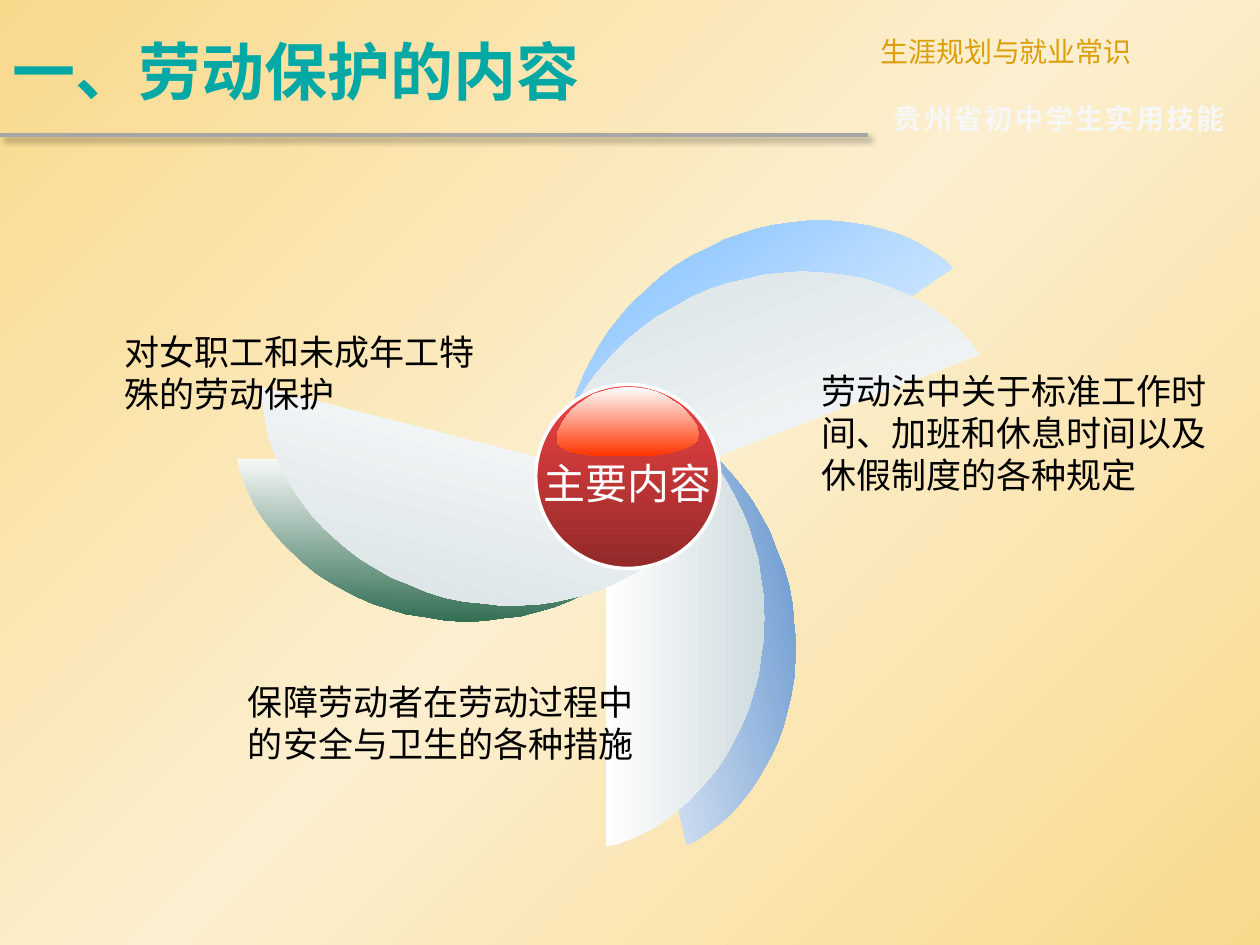
from lxml import etree
from pptx import Presentation
from pptx.dml.color import RGBColor
from pptx.enum.shapes import MSO_CONNECTOR, MSO_SHAPE
from pptx.enum.text import MSO_ANCHOR, MSO_AUTO_SIZE, PP_ALIGN
from pptx.oxml import parse_xml
from pptx.oxml.ns import nsdecls, qn
from pptx.util import Cm, Pt
import copy

STRAIGHT, ELLIPSE = MSO_CONNECTOR.STRAIGHT, MSO_SHAPE.OVAL
LEFT, CENTER, JUSTIFY = PP_ALIGN.LEFT, PP_ALIGN.CENTER, PP_ALIGN.JUSTIFY
MIDDLE = MSO_ANCHOR.MIDDLE
GROW, FIXED = MSO_AUTO_SIZE.SHAPE_TO_FIT_TEXT, MSO_AUTO_SIZE.NONE

FONT = "Noto Sans CJK SC"
WHITE = RGBColor(0xFF, 0xFF, 0xFF)
BLACK = RGBColor(0x00, 0x00, 0x00)
SAND = RGBColor(0xF9, 0xD9, 0x8C)
CREAM = RGBColor(0xFC, 0xEF, 0xCF)
GRAY = RGBColor(0xA6, 0xA6, 0xA6)
PALE = RGBColor(0xF7, 0xF7, 0xF7)
GOLD = RGBColor(0xDC, 0x9F, 0x0C)
TEAL = RGBColor(0x04, 0xA8, 0xA4)
SILVER = RGBColor(0xCF, 0xDB, 0xDF)
BLUE = RGBColor(0x44, 0x7E, 0xC4)
GREEN = RGBColor(0x2A, 0x68, 0x4C)
SKY = RGBColor(0x5E, 0xAE, 0xFF)
RED = RGBColor(0xF1, 0x43, 0x43)
DARK_RED = RGBColor(0x92, 0x29, 0x29)
ORANGE = RGBColor(0xFF, 0x33, 0x00)

# Upper half of a blade's curved edge, in cm; the lower half mirrors it
BLADE_HEIGHT = 9.22
HALF_EDGE = [
    (0, 0), (0.23, 0.05), (0.48, 0.15), (0.71, 0.25), (0.97, 0.38),
    (1.19, 0.53), (1.42, 0.71), (1.65, 0.91), (1.85, 1.12), (2.06, 1.35),
    (2.26, 1.6), (2.44, 1.88), (2.59, 2.16), (2.74, 2.46), (2.87, 2.77),
    (2.97, 3.1), (3.07, 3.45), (3.12, 3.84), (3.18, 4.22), (3.2, 4.61)]
BLADE = HALF_EDGE + [(x, BLADE_HEIGHT - y) for x, y in HALF_EDGE[-2::-1]]

# Highlight on the ball, in cm
GLOSS = [
    (14.05, 8.59), (14.1, 8.74), (14.05, 8.89), (13.92, 8.99), (13.72, 9.07),
    (13.46, 9.14), (13.16, 9.19), (12.12, 9.19), (11.84, 9.17), (11.53, 9.12),
    (11.35, 9.04), (11.25, 8.94), (11.23, 8.81), (11.25, 8.69), (11.33, 8.53),
    (11.43, 8.38), (11.53, 8.26), (11.66, 8.15), (11.81, 8.05), (11.96, 7.95),
    (12.12, 7.9), (12.29, 7.85), (12.47, 7.82), (12.67, 7.8), (12.88, 7.82),
    (13.06, 7.85), (13.23, 7.9), (13.41, 7.98), (13.56, 8.08), (13.72, 8.18),
    (13.84, 8.31), (13.94, 8.43)]


class Deck:
    """Holds the style and the current slide."""

    def __init__(self, prs):
        self.s = prs.slides.add_slide(prs.slide_layouts[5])

    def group(self):
        return self.s.shapes.add_group_shape().shapes

    def gradient(self, fill, start, end, angle=0):
        fill.gradient()
        fill.gradient_angle = angle
        for stop, color, pos in zip(fill.gradient_stops, (start, end), (0, 1)):
            stop.color.rgb = color
            stop.position = pos

    def background(self, edge, middle):
        fill = self.s.background.fill
        self.gradient(fill, edge, edge, 315)
        first = self.s.element.find(".//" + qn("a:gs"))
        first.addnext(copy.deepcopy(first))
        stop = fill.gradient_stops[1]
        stop.position = 0.5
        stop.color.rgb = middle

    def run(self, tf, text, size, color, align=LEFT, bold=False, spacing=0):
        p = tf.paragraphs[0]
        p.alignment = align
        r = p.add_run()
        r.text = text
        r.font.name, r.font.size, r.font.bold = FONT, Pt(size), bold
        r.font.color.rgb = color
        rpr = r._r.get_or_add_rPr()
        etree.SubElement(rpr, qn("a:ea"), typeface=FONT)
        if spacing:
            rpr.set("spc", str(spacing))

    def title(self, box, text):
        sp = self.s.shapes.title
        sp.left, sp.top, sp.width, sp.height = map(Cm, box)
        tf = sp.text_frame
        tf.auto_size, tf.vertical_anchor = FIXED, MIDDLE
        self.run(tf, text, 36, TEAL, bold=True)

    def text(self, box, text, size=20, color=BLACK, shapes=None, wrap=True,
             **style):
        sp = (shapes or self.s.shapes).add_textbox(*map(Cm, box))
        tf = sp.text_frame
        tf.word_wrap, tf.auto_size = wrap, GROW
        self.run(tf, text, size, color, **style)

    def rule(self, y, length):
        line = self.s.shapes.add_connector(
            STRAIGHT, Cm(0), Cm(y), Cm(length), Cm(y))
        line.line.color.rgb = GRAY
        line.line.width = Pt(2.25)
        line._element.spPr.append(parse_xml(
            f'<a:effectLst {nsdecls("a")}><a:outerShdw blurRad="{Pt(4)}" '
            f'dist="{Pt(3)}" dir="2700000" algn="tl" rotWithShape="0">'
            '<a:srgbClr val="000000"><a:alpha val="40000"/></a:srgbClr>'
            '</a:outerShdw></a:effectLst>'))

    def freeform(self, shapes, points, end, angle=0, left=0, top=0, rotation=0):
        pts = [(Cm(left + x), Cm(top + y)) for x, y in points]
        builder = shapes.build_freeform(*pts[0])
        builder.add_line_segments(pts[1:], close=True)
        sp = builder.convert_to_shape()
        sp.shadow.inherit = False
        sp.line.fill.background()
        self.gradient(sp.fill, WHITE, end, angle)
        sp.rotation = rotation

    def ball(self, shapes, left, top, size):
        sp = shapes.add_shape(ELLIPSE, Cm(left), Cm(top), Cm(size), Cm(size))
        sp.shadow.inherit = False
        self.gradient(sp.fill, RED, DARK_RED, 270)
        sp.line.color.rgb = WHITE
        sp.line.width = Pt(2)


def main():
    prs = Presentation()
    prs.slide_width, prs.slide_height = Cm(25.4), Cm(19.05)
    deck = Deck(prs)
    deck.background(SAND, CREAM)

    # Header
    deck.rule(2.72, 17.5)
    deck.text((17.5, 0.58, 7.9, 0.94), "生涯规划与就业常识", 16, GOLD,
              align=JUSTIFY)
    deck.text((17.77, 1.93, 7.4, 0.94), "贵州省初中学生实用技能", 16, PALE,
              bold=True, spacing=140, wrap=False)
    deck.title((0, 0.13, 17.5, 2.59), "一、劳动保护的内容")

    # Blades: coloured back, then silver front (left, top, rotation)
    blades = [
        (BLUE, (12.75, 7.57, 346.8), (12.22, 7.85, 0)),
        (GREEN, (7.77, 6.32, 91), (7.77, 5.89, 104.3)),
        (SKY, (12.9, 2.08, 235.5), (13.26, 2.72, 248.7)),
    ]
    for color, back, front in blades:
        shapes = deck.group()
        for end, (left, top, rotation) in ((color, back), (SILVER, front)):
            deck.freeform(shapes, BLADE, end, left=left, top=top,
                          rotation=rotation)

    # Central ball
    shapes = deck.group()
    deck.ball(shapes, 10.8, 7.75, 3.71)
    deck.freeform(shapes, GLOSS, ORANGE, 270)
    deck.text((10.69, 9.09, 3.94, 1.3), "主要内容", 24, WHITE, shapes,
              wrap=False, align=CENTER)

    # Blade captions
    deck.text((2.26, 6.53, 7.75, 1.96), "对女职工和未成年工特殊的劳动保护")
    deck.text((16.31, 7.32, 8.36, 2.82),
              "劳动法中关于标准工作时间、加班和休息时间以及休假制度的各种规定")
    deck.text((4.75, 13.59, 8.36, 1.96),
              "保障劳动者在劳动过程中的安全与卫生的各种措施")

    prs.save("out.pptx")


if __name__ == "__main__":
    main()
